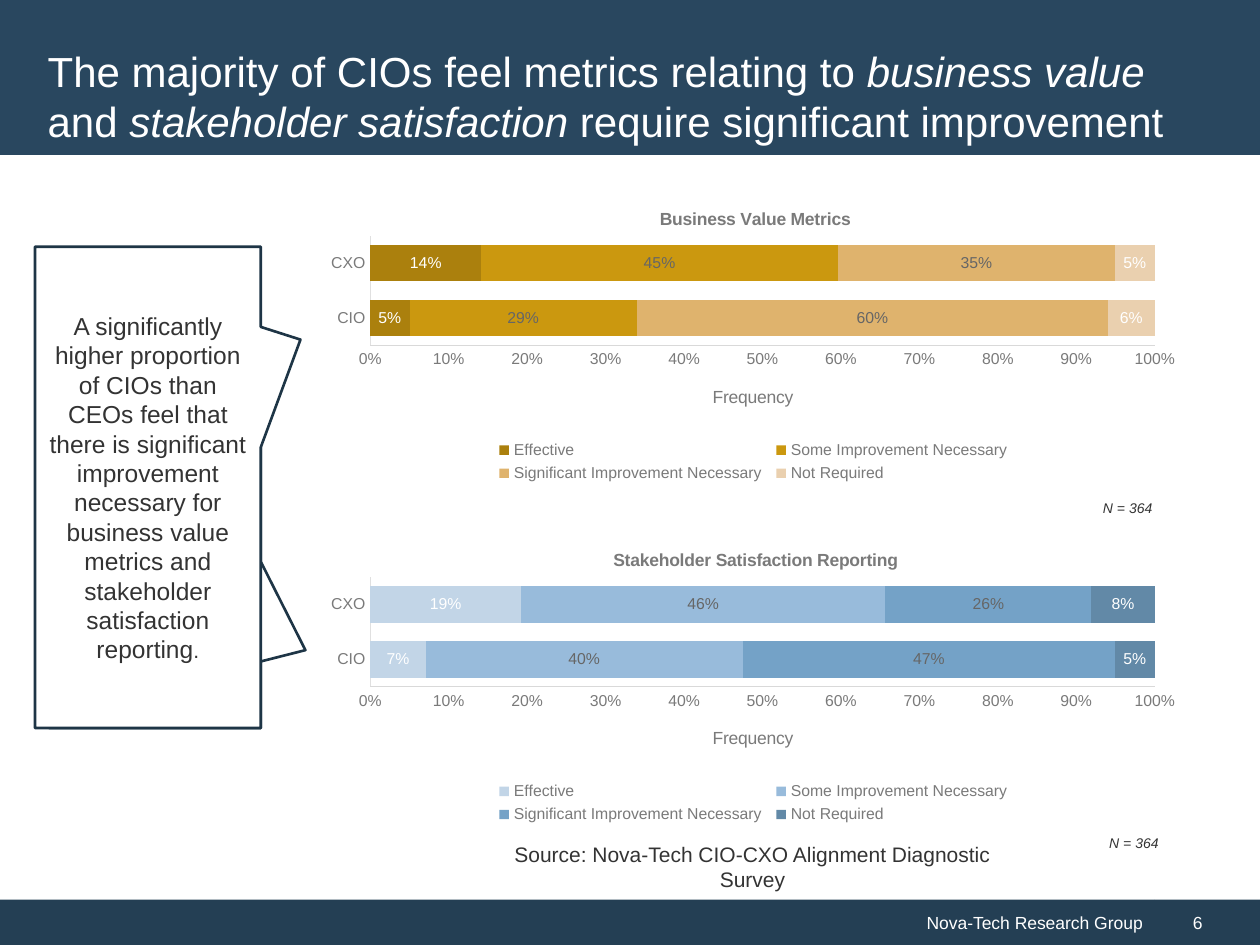
from lxml import etree
from pptx import Presentation
from pptx.chart.data import CategoryChartData
from pptx.dml.color import RGBColor
from pptx.enum.chart import XL_CHART_TYPE as ChartType, XL_LABEL_POSITION as LabelPos
from pptx.enum.chart import XL_LEGEND_POSITION as LegendPos, XL_TICK_MARK as TickMark
from pptx.enum.shapes import MSO_SHAPE as Shape
from pptx.enum.text import MSO_ANCHOR as Anchor, MSO_AUTO_SIZE as AutoSize, PP_ALIGN as Align
from pptx.oxml.ns import qn
from pptx.util import Pt

FONT = "Arial"
WHITE, TEXT, GREY, LABEL = "FFFFFF", "333333", "7A7A7A", "666666"
TITLE_BAND, FOOTER, OUTLINE = "29475F", "243F54", "1E3546"
RATINGS = ["Effective", "Some Improvement Necessary",
           "Significant Improvement Necessary", "Not Required"]
LABEL_COLORS = [WHITE, LABEL, LABEL, WHITE]


def rgb(color):
    return RGBColor.from_string(color)


def style_font(font, size, color, bold=False, italic=False):
    font.name, font.size = FONT, Pt(size)
    font.bold, font.italic = bold, italic
    font.color.rgb = rgb(color)


def write(frame, text, size=12, color=TEXT, align=Align.LEFT, anchor=Anchor.MIDDLE,
          bold=False, italic=False):
    """Append text as a run to the frame's first paragraph."""
    frame.word_wrap = True
    frame.vertical_anchor = anchor
    paragraph = frame.paragraphs[0]
    paragraph.alignment = align
    run = paragraph.add_run()
    run.text = text
    style_font(run.font, size, color, bold, italic)


def add_text(slide, box, text, **text_format):
    frame = slide.shapes.add_textbox(*map(Pt, box)).text_frame
    write(frame, text, **text_format)


def add_block(slide, box, fill, kind=Shape.RECTANGLE, line=None):
    block = slide.shapes.add_shape(kind, *map(Pt, box))
    block.shadow.inherit = False
    block.fill.solid()
    block.fill.fore_color.rgb = rgb(fill)
    if line:
        block.line.color.rgb = rgb(line)
        block.line.width = Pt(1.5)
    else:
        block.line.fill.background()
    return block


def add_title(slide, box):
    left, top, width, height = box
    band = add_block(slide, box, TITLE_BAND)
    title = slide.shapes.title
    title._element.addprevious(band._element)
    title.left, title.top = Pt(left + 20), Pt(top + 20)
    title.width, title.height = Pt(width - 41), Pt(height - 19.5)
    frame = title.text_frame
    frame.auto_size = AutoSize.NONE
    frame.margin_right = Pt(18)
    for text, italic in [("The majority of CIOs feel metrics relating to ", False),
                         ("business value ", True), ("and ", False),
                         ("stakeholder satisfaction ", True),
                         ("require significant improvement", False)]:
        write(frame, text, size=24, color=WHITE, italic=italic)


def add_callout(slide, box):
    """One message with two pointers: the rear callout supplies the lower one."""
    left, top, width, height = box
    parts = [((left + 8, top + 47, width - 8, height - 47), (0.711, 0.305)),
             (box, (0.676, -0.307))]
    for part_box, pointer in parts:
        callout = add_block(slide, part_box, WHITE, Shape.RECTANGULAR_CALLOUT, OUTLINE)
        for index, offset in enumerate(pointer):
            callout.adjustments[index] = offset
    message = ("A significantly higher proportion of CIOs than CEOs feel that there is "
               "significant improvement necessary for business value metrics and "
               "stakeholder satisfaction reporting")
    write(callout.text_frame, message, size=14, align=Align.CENTER)
    write(callout.text_frame, ".", size=12, align=Align.CENTER)


def fix_layout(part, index, inner=False, **fractions):
    """Place a chart part by fractions of the chart; index is the schema position."""
    for old in part.findall(qn("c:layout")):
        part.remove(old)
    layout = etree.Element(qn("c:layout"))
    manual = etree.SubElement(layout, qn("c:manualLayout"))
    settings = [("layoutTarget", "inner")] if inner else []
    settings += [("xMode", "edge"), ("yMode", "edge"), *fractions.items()]
    for tag, value in settings:
        etree.SubElement(manual, qn("c:" + tag)).set("val", str(value))
    part.insert(index, layout)


def style_axis(axis, line_color):
    axis.major_tick_mark = axis.minor_tick_mark = TickMark.NONE
    axis.has_major_gridlines = False
    axis.format.line.color.rgb = rgb(line_color)
    axis.format.line.width = Pt(0.75)
    style_font(axis.tick_labels.font, 9, GREY)


def add_rating_chart(slide, box, heading, heading_x, values, colors, note_offset):
    data = CategoryChartData(number_format="0%")
    data.categories = ["CIO", "CXO"]
    for rating, shares in zip(RATINGS, values):
        data.add_series(rating, shares)
    chart = slide.shapes.add_chart(ChartType.BAR_STACKED_100, *map(Pt, box), data).chart
    style_font(chart.font, 10, TEXT)

    plot = chart.plots[0]
    plot.gap_width, plot.overlap = 50, 100
    plot.vary_by_categories = False
    for series, color, label_color in zip(plot.series, colors, LABEL_COLORS):
        series.format.fill.solid()
        series.format.fill.fore_color.rgb = rgb(color)
        labels = series.data_labels
        labels.show_value = True
        labels.position = LabelPos.CENTER
        labels.number_format, labels.number_format_is_linked = "0%", False
        style_font(labels.font, 9, label_color)

    frequency = chart.value_axis
    style_axis(chart.category_axis, "E0E0E0")
    style_axis(frequency, "D9D9D9")
    frequency.minimum_scale, frequency.maximum_scale, frequency.major_unit = 0, 1, 0.1
    frequency.tick_labels.number_format = "0%"
    frequency.tick_labels.number_format_is_linked = False

    chart.has_legend = True
    chart.legend.position = LegendPos.BOTTOM
    chart.legend.include_in_layout = False
    style_font(chart.legend.font, 9, GREY)

    for title, text, bold, x, y in [(chart.chart_title, heading, True, heading_x, 0.06),
                                    (frequency.axis_title, "Frequency", False, 0.45, 0.65)]:
        write(title.text_frame, text, size=10, color=GREY, align=Align.CENTER, bold=bold)
        fix_layout(title._element, 1, x=x, y=y)
    fix_layout(chart.legend._element, 1, x=0.2, y=0.83, w=0.6, h=0.17)
    fix_layout(chart._chartSpace.chart.plotArea, 0, inner=True,
               x=0.064, y=0.164, w=0.893, h=0.365)

    note_x, note_y = note_offset
    add_text(slide, (box[0] + note_x, box[1] + note_y, 66, 17), "N = 364",
             size=8, align=Align.CENTER, anchor=Anchor.TOP, italic=True)


def add_footer(slide, box):
    left, top, width, height = box
    split = width - 60
    owner = add_block(slide, (left, top, split, height), FOOTER)
    write(owner.text_frame, "Nova-Tech Research Group", size=10, color=WHITE,
          align=Align.RIGHT)
    page = add_block(slide, (left + split, top, width - split, height), FOOTER)
    page.text_frame.margin_left = Pt(21.6)
    write(page.text_frame, "6", size=10, color=WHITE)


def main():
    deck = Presentation()
    deck.slide_width, deck.slide_height = Pt(720), Pt(540)
    slide = deck.slides.add_slide(deck.slide_layouts[5])
    add_title(slide, (0, 0, 720, 88.5))
    add_footer(slide, (0, 514, 720, 26))
    add_rating_chart(slide, (179.5, 106.5, 502, 172), "Business Value Metrics", 0.39,
                     [(0.05, 0.14), (0.29, 0.45), (0.6, 0.35), (0.06, 0.05)],
                     ["AB800D", "CB980F", "DFB36D", "EAD0AF"], (432, 175.5))
    add_rating_chart(slide, (179.5, 301.5, 502, 172), "Stakeholder Satisfaction Reporting",
                     0.337, [(0.07, 0.19), (0.4, 0.46), (0.47, 0.26), (0.05, 0.08)],
                     ["C2D5E7", "98BBDB", "74A2C7", "6289A7"], (435.5, 172))
    add_callout(slide, (20, 141, 129, 275))
    add_text(slide, (268.5, 486, 323, 18),
             "Source: Nova-Tech CIO-CXO Alignment Diagnostic Survey", align=Align.CENTER)
    deck.save("out.pptx")


if __name__ == "__main__":
    main()
